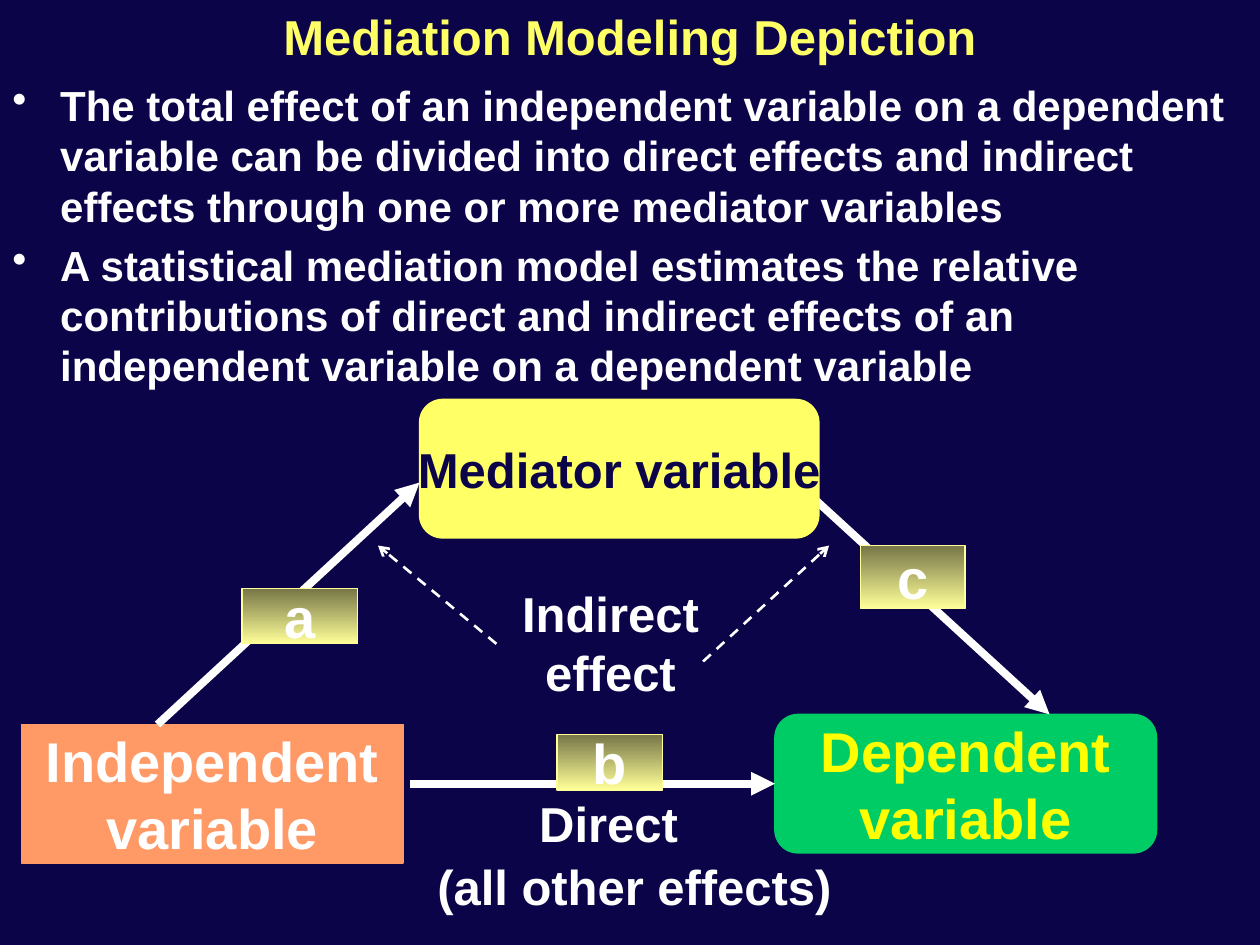
from lxml import etree
from pptx import Presentation
from pptx.dml.color import RGBColor
from pptx.enum.dml import MSO_LINE
from pptx.enum.shapes import MSO_CONNECTOR, MSO_SHAPE
from pptx.enum.text import MSO_ANCHOR, PP_ALIGN
from pptx.oxml.ns import qn
from pptx.util import Inches, Pt

CENTER, LEFT = PP_ALIGN.CENTER, PP_ALIGN.LEFT
TOP, MIDDLE = MSO_ANCHOR.TOP, MSO_ANCHOR.MIDDLE
RECTANGLE, ROUNDED = MSO_SHAPE.RECTANGLE, MSO_SHAPE.ROUNDED_RECTANGLE
STRAIGHT, DASH = MSO_CONNECTOR.STRAIGHT, MSO_LINE.DASH
LEFT_SIDE = 1
COLORS = {
    "background": "0C0448", "text": "FFFFFF", "mediator": "FFFF66",
    "independent": "FF9966", "dependent": "00CC66", "dependent_text": "FFFF00",
    "path_dark": "767647", "path_light": "FFFF99",
}
EFFECTS = [
    "The total effect of an independent variable on a dependent variable can be "
    "divided into direct effects and indirect effects through one or more mediator variables",
    "A statistical mediation model estimates the relative contributions of direct and "
    "indirect effects of an independent variable on a dependent variable",
]


def color(name):
    """Return the named colour."""
    return RGBColor.from_string(COLORS[name])


def write(shape, lines, size, ink="text", align=CENTER, anchor=TOP, wrap=True):
    """Fill a shape with bold paragraphs in one style."""
    frame = shape.text_frame
    frame.text = "\n".join(lines)
    frame.word_wrap, frame.vertical_anchor = wrap, anchor
    for paragraph in frame.paragraphs:
        paragraph.alignment = align
        font = paragraph.font
        font.name, font.size, font.bold = "Arial", Pt(size), True
        font.color.rgb = color(ink)


def add_label(slide, box, lines):
    """Add a centred caption."""
    write(slide.shapes.add_textbox(*map(Inches, box)), lines, 28)


def add_bullets(slide, box, items):
    """Add a bulleted list with hanging indents."""
    bullets = slide.shapes.add_textbox(*map(Inches, box))
    bullets.text_frame.text = "\n".join(items)
    write(bullets, items, 24, align=LEFT)
    for number, paragraph in enumerate(bullets.text_frame.paragraphs):
        paragraph.space_before = Pt(5 if number else 0)
        properties = paragraph._p.get_or_add_pPr()
        properties.set("marL", str(Inches(0.38)))
        properties.set("indent", str(-Inches(0.38)))
        bullet = etree.Element(qn("a:buChar"), char="•")
        properties.find(qn("a:defRPr")).addprevious(bullet)


def add_block(slide, box, lines, size, kind, edge, ink="text"):
    """Add an outlined block with centred text."""
    block = slide.shapes.add_shape(kind, *map(Inches, box))
    block.shadow.inherit = False
    block.fill.solid()
    block.fill.fore_color.rgb = color(edge)
    block.line.color.rgb = color(edge)
    block.line.width = Pt(0.75)
    write(block, lines, size, ink, anchor=MIDDLE, wrap=False)
    return block


def add_path_name(slide, box, letter):
    """Add a gradient tag that names a path."""
    tag = add_block(slide, box, [letter], 32, RECTANGLE, "path_light")
    tag.fill.gradient()
    tag.fill.gradient_angle = 270
    for stop, shade in zip(tag.fill.gradient_stops, ("path_dark", "path_light")):
        stop.color.rgb = color(shade)


def add_arrow(slide, start, end, width=4.5, head="triangle", dash=None):
    """Add a straight arrow between two points."""
    arrow = slide.shapes.add_connector(STRAIGHT, *map(Inches, start + end))
    arrow.line.color.rgb = color("text")
    arrow.line.width = Pt(width)
    if dash:
        arrow.line.dash_style = dash
    etree.SubElement(arrow.line._get_or_add_ln(), qn("a:tailEnd"), type=head)
    etree.SubElement(arrow._element.spPr, qn("a:effectLst"))
    return arrow


def add_title(slide, text):
    """Place and format the title."""
    title = slide.shapes.title
    title.left, title.top, title.width, title.height = map(Inches, (0, 0, 10, 1.25))
    write(title, [text], 28, "mediator")


def main():
    """Build the mediation model slide."""
    deck = Presentation()
    deck.slide_width, deck.slide_height = Inches(10), Inches(7.5)
    slide = deck.slides.add_slide(deck.slide_layouts[5])
    slide.background.fill.solid()
    slide.background.fill.fore_color.rgb = color("background")

    add_title(slide, "Mediation Modeling Depiction")
    add_bullets(slide, (0, 0.58, 10, 2.17), EFFECTS)

    add_block(slide, (0.17, 5.75, 3.03, 1.1), ["Independent", "variable"], 32,
              RECTANGLE, "independent")
    dependent = add_block(slide, (6.15, 5.67, 3.03, 1.1), ["Dependent", "variable"], 32,
                          ROUNDED, "dependent", "dependent_text")
    direct = add_arrow(slide, (3.25, 6.22), (6.15, 6.22))
    direct.end_connect(dependent, LEFT_SIDE)
    add_arrow(slide, (1.25, 5.75), (3.33, 3.83))
    add_arrow(slide, (6.42, 3.92), (8.33, 5.67))
    add_block(slide, (3.33, 3.17, 3.17, 1.1), ["Mediator variable"], 28,
              ROUNDED, "mediator", "background")

    add_label(slide, (3.94, 4.58, 1.81, 1.04), ["Indirect", "effect"])
    add_label(slide, (3.81, 6.25, 2.04, 0.57), ["Direct"])
    add_label(slide, (3.33, 6.75, 3.41, 0.57), ["(all other effects)"])

    for letter, box in (("a", (1.92, 4.67, 0.92, 0.44)),
                        ("b", (4.42, 5.83, 0.84, 0.44)),
                        ("c", (6.83, 4.33, 0.83, 0.5))):
        add_path_name(slide, box, letter)
    for start, end in (((3.94, 5.11), (3, 4.33)), ((5.58, 5.25), (6.58, 4.33))):
        add_arrow(slide, start, end, 1.5, "arrow", DASH)

    deck.save("out.pptx")


if __name__ == "__main__":
    main()
